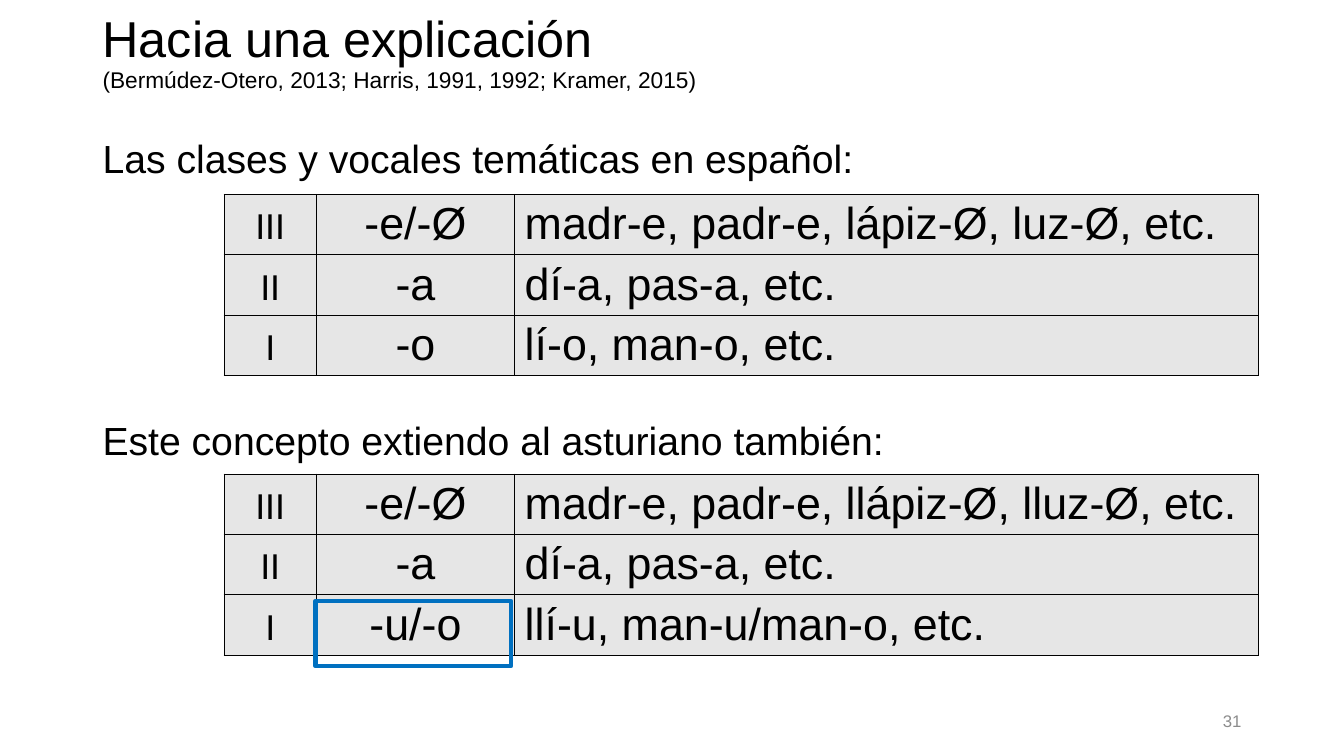
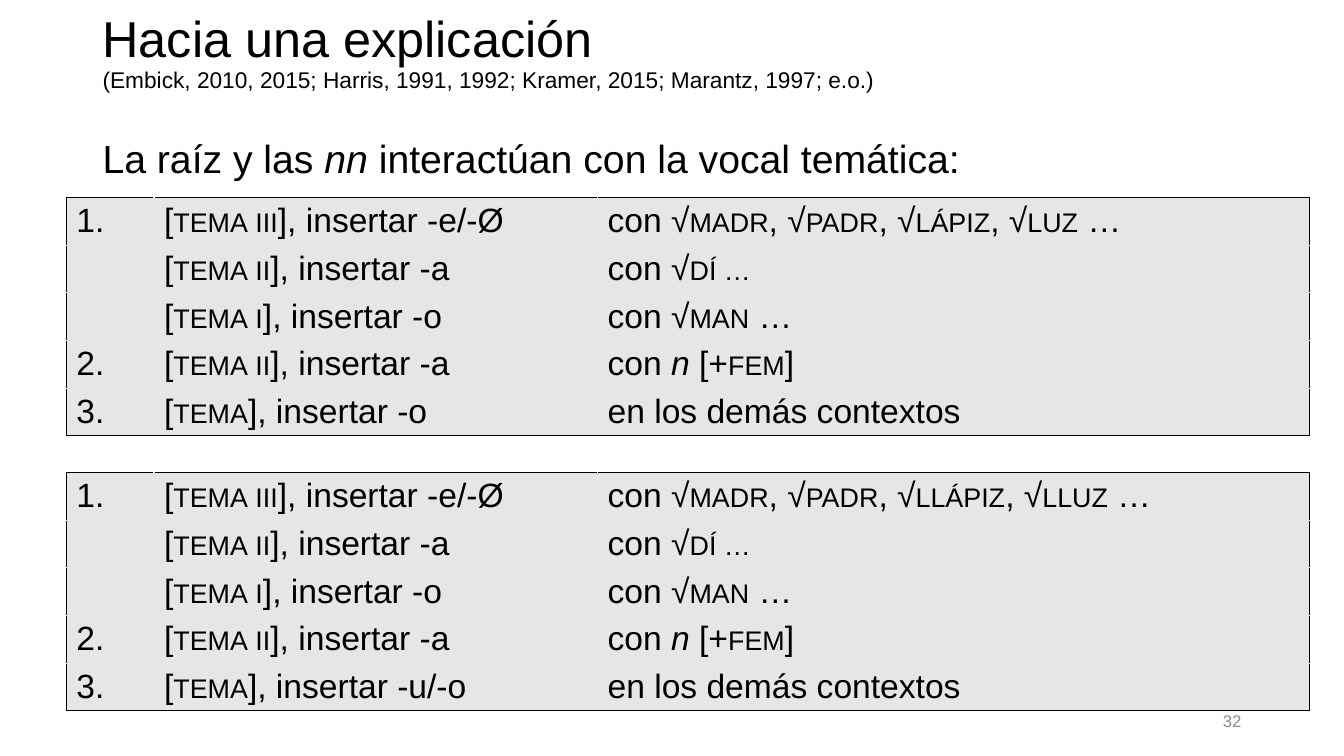
from lxml.etree import SubElement
from pptx import Presentation
from pptx.dml.color import RGBColor
from pptx.enum.shapes import MSO_SHAPE
from pptx.enum.text import MSO_ANCHOR, MSO_AUTO_SIZE, PP_ALIGN
from pptx.oxml.ns import qn
from pptx.util import Cm, Pt

COLORS = {"ink": "000000", "cell": "E6E6E6", "mark": "0070C0", "page": "8C8C8C"}
FONT = "Arial"
LEFT, WIDE = 2.33, 29.21
PAD_TOP, PAD_LOW = 0.12, 0.02
LEFT_AL, MID_AL = PP_ALIGN.LEFT, PP_ALIGN.CENTER


def tint(name):
    return RGBColor.from_string(COLORS[name])


def place(shape, x, y, w, h):
    shape.left, shape.top, shape.width, shape.height = Cm(x), Cm(y), Cm(w), Cm(h)


def style(run, size, color="ink"):
    run.font.name = FONT
    run.font.size = Pt(size)
    run.font.color.rgb = tint(color)


def write(para, text, size, align=LEFT_AL):
    para.alignment = align
    for i, part in enumerate(text.split("^")):
        for j, bit in enumerate(part.split("*")):
            if not bit:
                continue
            run = para.add_run()
            run.text = bit
            style(run, size)
            if i % 2:
                run.font._element.set("cap", "small")
            if j % 2:
                run.font.italic = True


def head(slide, title, cite):
    shape = slide.shapes.title
    place(shape, LEFT, 0.46, WIDE, 1.78)
    frame = shape.text_frame
    frame.text = f"{title}\v{cite}"
    frame.word_wrap = True
    frame.auto_size = MSO_AUTO_SIZE.NONE
    frame.vertical_anchor = MSO_ANCHOR.MIDDLE
    para = frame.paragraphs[0]
    para.alignment = LEFT_AL
    para.line_spacing = 0.9
    for run, size in zip(para.runs, (36, 16.2)):
        style(run, size)
    for gap in para._p.findall(qn("a:br")):
        SubElement(gap, qn("a:rPr"), sz="3600")


def body(slide, lines, high, gap=0):
    shape = slide.placeholders[1]
    place(shape, LEFT, 3.4, WIDE, high)
    frame = shape.text_frame
    frame.word_wrap = True
    frame.auto_size = MSO_AUTO_SIZE.NONE
    frame.vertical_anchor = MSO_ANCHOR.TOP
    for i, line in enumerate(lines):
        para = frame.add_paragraph() if i else frame.paragraphs[0]
        props = para._p.get_or_add_pPr()
        props.set("marL", "0")
        props.set("indent", "0")
        SubElement(props, qn("a:buNone"))
        para.line_spacing = 0.9
        para.space_before = Pt(gap if i else 0)
        write(para, line, 28)


def foot(slide, num):
    box = slide.shapes.add_textbox(Cm(23.92), Cm(17.66), Cm(7.62), Cm(1.01))
    frame = box.text_frame
    frame.text = num
    frame.word_wrap = True
    frame.vertical_anchor = MSO_ANCHOR.MIDDLE
    para = frame.paragraphs[0]
    para.alignment = PP_ALIGN.RIGHT
    style(para.runs[0], 12, "page")


def edge(cell, sides):
    props = cell._tc.get_or_add_tcPr()
    for i, (side, color) in enumerate(sides.items()):
        line = SubElement(props, qn(f"a:ln{side}"), w="12700")
        fill = SubElement(line, qn("a:solidFill"))
        SubElement(fill, qn("a:srgbClr"), val=COLORS[color])
        props.insert(i, line)


def grid(slide, x, y, cols, high, rows, size, aligns, inner):
    shape = slide.shapes.add_table(
        len(rows), len(cols), Cm(x), Cm(y), Cm(sum(cols)), Cm(high * len(rows)))
    table = shape.table
    table.first_row = table.horz_banding = False
    for col, width in zip(table.columns, cols):
        col.width = Cm(width)
    for r, row in enumerate(rows):
        table.rows[r].height = Cm(high)
        for c, text in enumerate(row):
            cell = table.cell(r, c)
            cell.margin_top, cell.margin_bottom = Cm(PAD_TOP), Cm(PAD_LOW)
            cell.fill.solid()
            cell.fill.fore_color.rgb = tint("cell")
            write(cell.text_frame.paragraphs[0], text, size, aligns[c])
            outer = {"L": c == 0, "R": c == len(cols) - 1,
                     "T": r == 0, "B": r == len(rows) - 1}
            edge(cell, {k: "ink" if out else inner for k, out in outer.items()})


def vowels(slide, y, last, words):
    rows = zip(("^iii^", "^ii^", "^i^"), ("-e/-Ø", "-a", last), words)
    grid(slide, 5.65, y, (2.32, 5, 18.74), 1.52, list(rows), 32,
         (MID_AL, MID_AL, LEFT_AL), "ink")


def rules(slide, y, roots, last):
    names = ", ".join(f"√^{root}^" for root in roots)
    rows = [
        ("1.", "[^tema iii^], insertar -e/-Ø", f"con {names} …"),
        ("", "[^tema ii^], insertar -a", "con √^dí …^"),
        ("", "[^tema i^], insertar -o", "con √^man^ …"),
        ("2.", "[^tema ii^], insertar -a", "con *n* [+^fem^]"),
        ("3.", f"[^tema^], insertar {last}", "en los demás contextos"),
    ]
    grid(slide, 1.67, y, (2.21, 11.18, 17.94), 1.2, rows, 24,
         (LEFT_AL,) * 3, "cell")


def mark(slide, x, y, w, h):
    box = slide.shapes.add_shape(MSO_SHAPE.RECTANGLE, Cm(x), Cm(y), Cm(w), Cm(h))
    box.shadow.inherit = False
    box.fill.background()
    box.line.color.rgb = tint("mark")
    box.line.width = Pt(3)


def start(deck, title, cite, num):
    slide = deck.slides.add_slide(deck.slide_layouts[1])
    head(slide, title, cite)
    foot(slide, num)
    return slide


def classes(deck):
    slide = start(deck, "Hacia una explicación",
                  "(Bermúdez-Otero, 2013; Harris, 1991, 1992; Kramer, 2015)", "31")
    body(slide, ("Las clases y vocales temáticas en español:",
                 "Este concepto extiendo al asturiano también:"), 14.02, 171)
    vowels(slide, 4.9, "-o", ("madr-e, padr-e, lápiz-Ø, luz-Ø, etc.",
                              "dí-a, pas-a, etc.", "lí-o, man-o, etc."))
    vowels(slide, 11.95, "-u/-o", ("madr-e, padr-e, llápiz-Ø, lluz-Ø, etc.",
                                   "dí-a, pas-a, etc.",
                                   "llí-u, man-u/man-o, etc."))
    mark(slide, 7.95, 15.14, 4.93, 1.65)


def roots(deck):
    slide = start(deck, "Hacia una explicación ",
                  "(Embick, 2010, 2015; Harris, 1991, 1992; Kramer, 2015; "
                  "Marantz, 1997; e.o.)", "32")
    body(slide, ("La raíz y las *nn *interactúan con la vocal temática:",), 15.19)
    rules(slide, 4.98, ("madr", "padr", "lápiz", "luz"), "-o")
    rules(slide, 11.91, ("madr", "padr", "llápiz", "lluz"), "-u/-o")


def main():
    deck = Presentation()
    deck.slide_width, deck.slide_height = Cm(33.87), Cm(19.05)
    classes(deck)
    roots(deck)
    deck.save("out.pptx")


if __name__ == "__main__":
    main()
